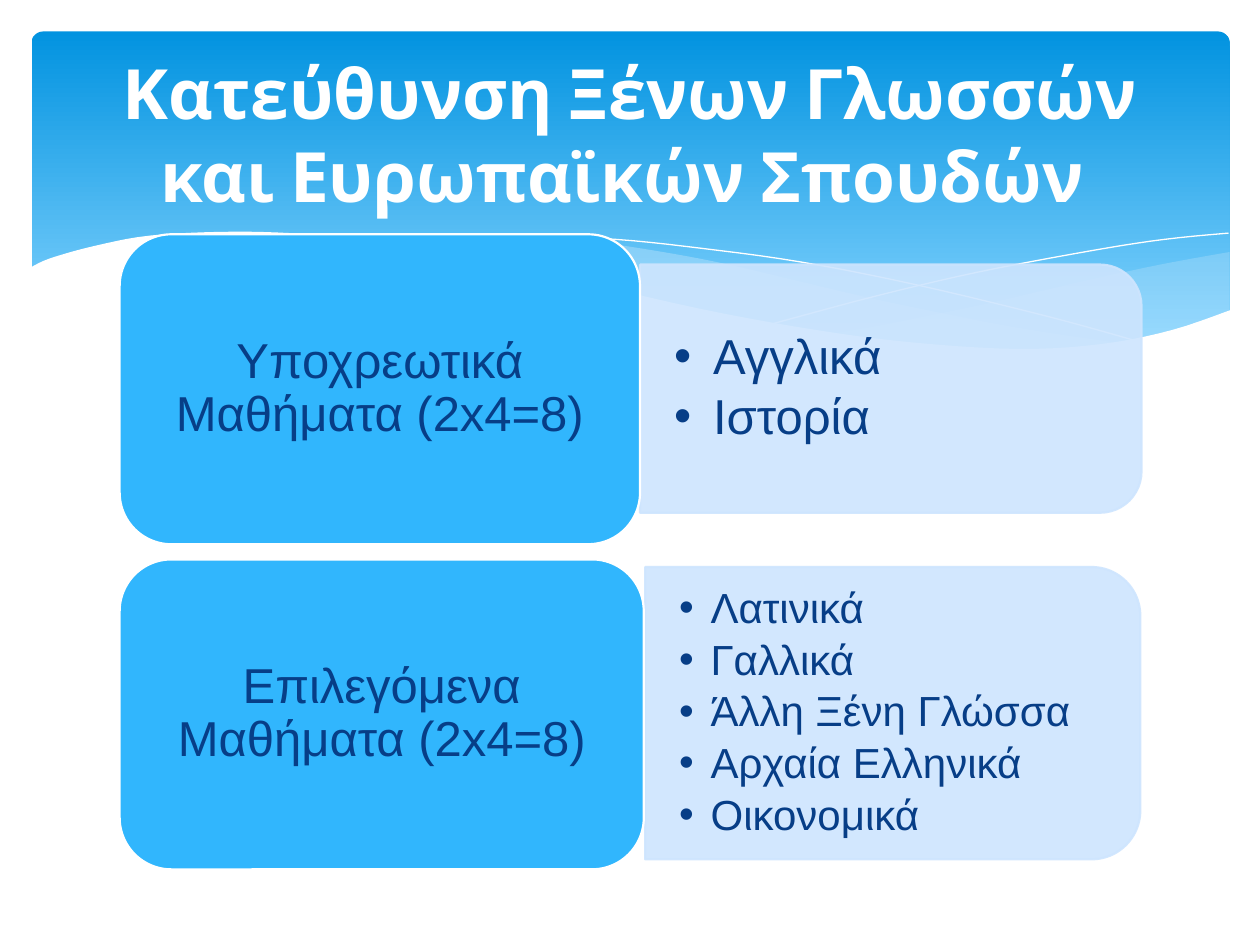
from lxml.etree import SubElement
from pptx import Presentation
from pptx.dml.color import RGBColor
from pptx.enum.shapes import MSO_SHAPE
from pptx.enum.text import MSO_ANCHOR, MSO_AUTO_SIZE, PP_ALIGN
from pptx.oxml.ns import qn
from pptx.util import Inches, Pt

WHITE = RGBColor(0xFF, 0xFF, 0xFF)
BAND_TOP = RGBColor(0x02, 0x93, 0xE0)
BAND_BOTTOM = RGBColor(0x83, 0xD3, 0xFE)
WAVE = RGBColor(0xC6, 0xE7, 0xFC)
CARD = RGBColor(0x31, 0xB6, 0xFD)
PANEL = RGBColor(0xCE, 0xE5, 0xFE)
NAVY = RGBColor(0x07, 0x3E, 0x87)

# Wave edges: points that each curve passes through
RIGHT_WAVE_TOP = [(9.76, 2), (9.21, 2.1), (8.61, 2.23), (7.79, 2.42), (7.06, 2.57), (6.61, 2.65)]
RIGHT_WAVE_BOTTOM = [(6.61, 2.65), (7.19, 2.72), (7.69, 2.77), (8.14, 2.78), (8.63, 2.75),
                     (9.05, 2.69), (9.42, 2.59), (9.76, 2.47)]
LONG_WAVE_TOP = [(8.93, 2.73), (8.07, 2.6), (7.06, 2.4), (6.29, 2.22), (5.69, 2.08),
                 (5.14, 1.98), (4.65, 1.91), (4.2, 1.87), (3.61, 1.85), (3.13, 1.88), (2.86, 1.91)]
LONG_WAVE_BOTTOM = [(2.86, 1.91), (3.42, 1.99), (4.04, 2.11), (4.91, 2.32), (5.66, 2.48),
                    (6.34, 2.61), (7.09, 2.72), (7.73, 2.77), (8.28, 2.78), (8.93, 2.73)]
FALLING_LINE = [(3.09, 1.95), (3.53, 1.89), (4.16, 1.87), (4.89, 1.9), (5.56, 1.97),
                (6.36, 2.08), (7.27, 2.26), (8.31, 2.51), (9.07, 2.72)]
RISING_LINE = [(6.13, 2.57), (6.95, 2.35), (7.76, 2.16), (8.66, 1.99), (9.24, 1.9), (9.75, 1.85)]
WHITE_EDGE = [(9.77, 2.46), (9.3, 2.62), (8.75, 2.73), (8.09, 2.77), (7.26, 2.72), (6.48, 2.62),
              (5.55, 2.45), (4.47, 2.2), (3.65, 2.02), (2.92, 1.9), (2.3, 1.85), (1.77, 1.84),
              (1.19, 1.87), (0.76, 1.95), (0.4, 2.05), (0.23, 2.13)]


def smooth(points, steps=5):
    """Catmull-Rom curve through the points."""
    padded = [points[0], *points, points[-1]]
    curve = [points[0]]
    for a, b, c, d in zip(padded, padded[1:], padded[2:], padded[3:]):
        for n in range(1, steps + 1):
            t = n / steps
            curve.append(tuple(
                0.5 * (2 * q + (r - p) * t + (2 * p - 5 * q + 4 * r - s) * t**2
                       + (3 * q - p - 3 * r + s) * t**3)
                for p, q, r, s in zip(a, b, c, d)))
    return curve


def set_alpha(fill, percent):
    color = fill._xPr.find(qn("a:solidFill"))[0]
    SubElement(color, qn("a:alpha"), val=str(percent * 1000))


def add_curve(s, points, fill=None, alpha=100):
    """Filled outline, or a white hairline when no fill is given."""
    (x, y), *rest = [(Inches(x), Inches(y)) for x, y in points]
    builder = s.shapes.build_freeform(x, y)
    builder.add_line_segments(rest, close=fill is not None)
    sp = builder.convert_to_shape()
    sp.shadow.inherit = False
    if fill is None:
        sp.fill.background()
        sp.line.color.rgb = WHITE
        sp.line.width = Pt(0)
    else:
        sp.fill.solid()
        sp.fill.fore_color.rgb = fill
        set_alpha(sp.fill, alpha)
        sp.line.fill.background()


def add_box(s, kind, x, y, w, h, fill, line):
    sp = s.shapes.add_shape(kind, Inches(x), Inches(y), Inches(w), Inches(h))
    sp.shadow.inherit = False
    sp.fill.solid()
    sp.fill.fore_color.rgb = fill
    sp.line.color.rgb = line
    sp.line.width = Pt(1.25)
    return sp


def set_frame(tf, inset_x, inset_y):
    tf.word_wrap = True
    tf.vertical_anchor = MSO_ANCHOR.MIDDLE
    tf.margin_left = tf.margin_right = Inches(inset_x)
    tf.margin_top = tf.margin_bottom = Inches(inset_y)


def add_run(p, text, size, font="Arial", color=NAVY, bold=False):
    r = p.add_run()
    r.text = text
    r.font.size = Pt(size)
    r.font.name = font
    r.font.color.rgb = color
    r.font.bold = bold


def add_band(s):
    sp = add_box(s, MSO_SHAPE.ROUNDED_RECTANGLE, 0.25, 0.25, 9.51, 2.7, BAND_TOP, BAND_TOP)
    sp.adjustments[0] = 0.034
    sp.line.fill.background()
    sp.fill.gradient()
    sp.fill.gradient_angle = 270
    stops = zip(sp.fill.gradient_stops, (0, 0.9), (BAND_TOP, BAND_BOTTOM))
    for stop, position, color in stops:
        stop.position = position
        stop.color.rgb = color

    # Waves along the lower edge
    add_curve(s, smooth(RIGHT_WAVE_TOP) + smooth(RIGHT_WAVE_BOTTOM), WAVE, 29)
    add_curve(s, smooth(LONG_WAVE_TOP) + smooth(LONG_WAVE_BOTTOM), WAVE, 40)
    add_curve(s, smooth(FALLING_LINE))
    add_curve(s, smooth(RISING_LINE))
    add_curve(s, smooth(WHITE_EDGE) + [(0.23, 3.29), (9.77, 3.29)], WHITE)


def set_title(s, first, second):
    title = s.shapes.title
    s.shapes._spTree.append(title._element)  # bring in front of the band
    title.left, title.top = Inches(0.5), Inches(0.37)
    title.width, title.height = Inches(9), Inches(1.37)
    tf = title.text_frame
    tf.auto_size = MSO_AUTO_SIZE.NONE
    set_frame(tf, 0.1, 0.05)
    p = tf.paragraphs[0]
    p.alignment = PP_ALIGN.CENTER
    add_run(p, first, 39.6, "Cabin", WHITE, True)
    p.add_line_break()
    add_run(p, second, 39.6, "Cabin", WHITE, True)


def add_panel(s, x, y, w, h, items, size, indent):
    # Quarter turn about the centre puts the rounded corners on the right
    sp = add_box(s, MSO_SHAPE.ROUND_2_SAME_RECTANGLE,
                 x + (w - h) / 2, y + (h - w) / 2, h, w, PANEL, PANEL)
    sp.rotation = 90
    set_alpha(sp.fill, 90)
    set_alpha(sp.line.fill, 90)

    box = s.shapes.add_textbox(Inches(x), Inches(y + 0.1), Inches(w - 0.1), Inches(h - 0.2))
    tf = box.text_frame
    set_frame(tf, 0.27, 0.14)
    for i, item in enumerate(items):
        p = tf.add_paragraph() if i else tf.paragraphs[0]
        p.line_spacing = 0.9
        p.space_after = Pt(0.15 * size)
        pPr = p._p.get_or_add_pPr()
        pPr.set("marL", str(Inches(indent)))
        pPr.set("indent", str(-Inches(indent)))
        SubElement(pPr, qn("a:buFont"), typeface="Arial")
        SubElement(pPr, qn("a:buChar"), char="•")
        add_run(p, item, size)


def add_card(s, x, y, w, h, text):
    sp = add_box(s, MSO_SHAPE.ROUNDED_RECTANGLE, x, y, w, h, CARD, WHITE)
    tf = sp.text_frame
    set_frame(tf, 0.24, 0.18)
    p = tf.paragraphs[0]
    p.alignment = PP_ALIGN.CENTER
    p.line_spacing = 0.9
    add_run(p, text, 28)


def main():
    prs = Presentation()
    prs.slide_width, prs.slide_height = Inches(10), Inches(7.5)
    s = prs.slides.add_slide(prs.slide_layouts[5])

    add_band(s)
    set_title(s, "Κατεύθυνση Ξένων Γλωσσών", "και Ευρωπαϊκών Σπουδών ")

    # Compulsory courses
    add_panel(s, 5.08, 2.1, 3.98, 1.97, ["Αγγλικά", "Ιστορία"], 28, 0.31)
    add_card(s, 0.95, 1.86, 4.13, 2.46, "Υποχρεωτικά Μαθήματα (2x4=8)")

    # Elective courses
    add_panel(s, 5.12, 4.5, 3.93, 2.32,
              ["Λατινικά", "Γαλλικά", "Άλλη Ξένη Γλώσσα", "Αρχαία Ελληνικά", "Οικονομικά"],
              24, 0.25)
    add_card(s, 0.95, 4.44, 4.16, 2.46, "Επιλεγόμενα Μαθήματα (2x4=8)")

    prs.save("out.pptx")


if __name__ == "__main__":
    main()
